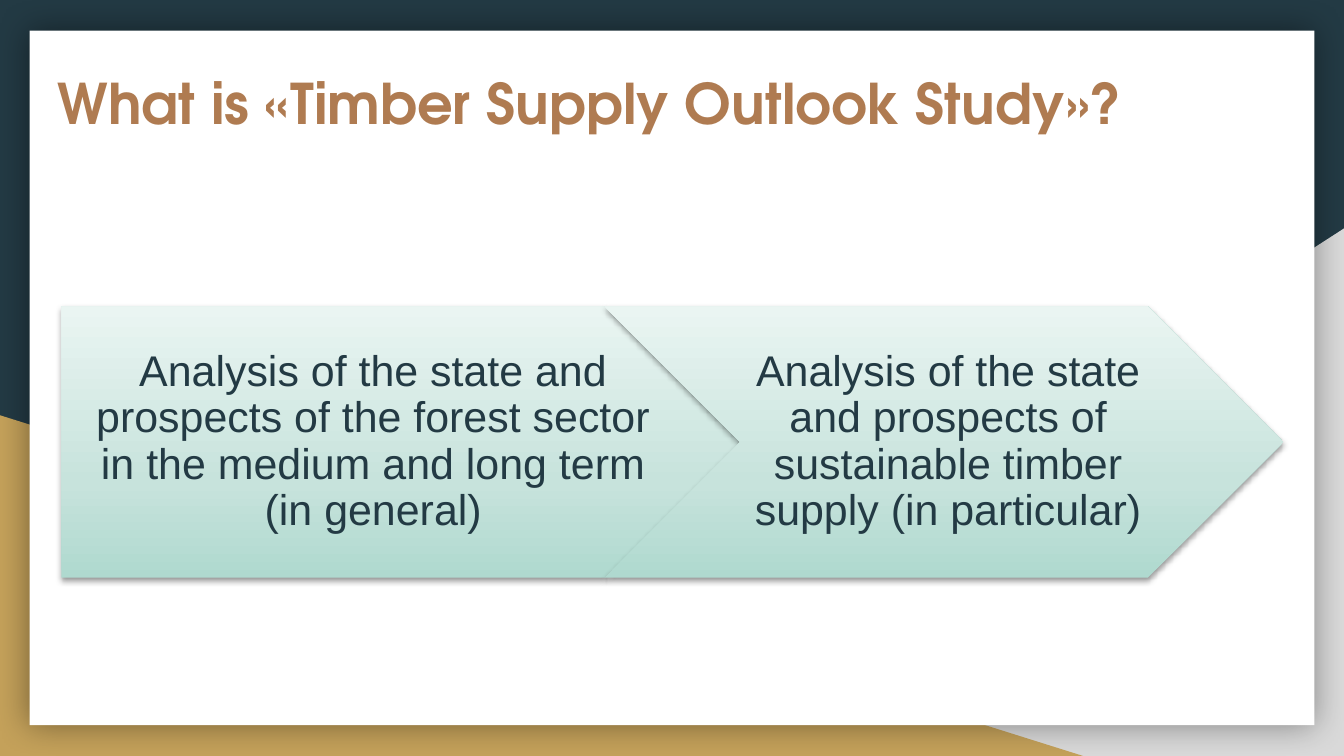
from lxml import etree
from pptx import Presentation
from pptx.dml.color import RGBColor
from pptx.enum import shapes, text
from pptx.oxml import parse_xml
from pptx.oxml.ns import nsdecls
from pptx.util import Cm, Pt

COLORS = {
    "night": "233A44", "grey": "D9D9D9", "gold": "C4A15A", "white": "FFFFFF",
    "copper": "AF7B51", "mint": "AFD9CF", "mint_mid": "C7E3DC", "mint_pale": "EAF5F2",
}


def write(shape, words, *, font, size, color, margins, bold=False, spacing=1.0, after=0,
          align=text.PP_ALIGN.LEFT, anchor=text.MSO_ANCHOR.TOP):
    """Put one formatted paragraph in a shape; margins are left, top, right, bottom in cm."""
    frame = shape.text_frame
    frame.word_wrap = True
    frame.auto_size = text.MSO_AUTO_SIZE.NONE
    frame.vertical_anchor = anchor
    (frame.margin_left, frame.margin_top,
     frame.margin_right, frame.margin_bottom) = map(Cm, margins)
    paragraph = frame.paragraphs[0]
    paragraph.alignment = align
    paragraph.line_spacing = spacing
    paragraph.space_after = Pt(after)
    run = paragraph.add_run()
    run.text = words
    run.font.name, run.font.size, run.font.bold = font, Pt(size), bold
    run.font.color.rgb = RGBColor.from_string(COLORS[color])


def add_shadow(shape, opacity, blur, distance=0, degrees=0):
    shape.element.spPr.append(parse_xml(
        f'<a:effectLst {nsdecls("a")}><a:outerShdw blurRad="{Pt(blur)}" dist="{Pt(distance)}" '
        f'dir="{degrees * 60000}" algn="ctr" rotWithShape="0"><a:srgbClr val="000000">'
        f'<a:alpha val="{opacity * 1000}"/></a:srgbClr></a:outerShdw></a:effectLst>'))


prs = Presentation()
prs.slide_width, prs.slide_height = Cm(25.4), Cm(14.29)
slide = prs.slides.add_slide(prs.slide_layouts[5])
slide.background.fill.solid()
slide.background.fill.fore_color.rgb = RGBColor.from_string(COLORS["night"])

# Corner triangles and the white panel
kinds = shapes.MSO_SHAPE
backdrop = [
    (kinds.RIGHT_TRIANGLE, (9.96, 4.32, 15.44, 9.97), "grey"),
    (kinds.RIGHT_TRIANGLE, (0, 7.85, 20.47, 6.44), "gold"),
    (kinds.RECTANGLE, (0.56, 0.58, 24.28, 13.13), "white"),
]
layers = []
for kind, box, color in backdrop:
    layer = slide.shapes.add_shape(kind, *map(Cm, box))
    layer.fill.solid()
    layer.fill.fore_color.rgb = RGBColor.from_string(COLORS[color])
    layer.line.fill.background()
    layers.append(layer)
right_corner, left_corner, panel = layers
right_corner.element.spPr.xfrm.set("flipH", "1")
for corner in (right_corner, left_corner):
    corner.shadow.inherit = False
add_shadow(panel, opacity=40, blur=18)

# Title, brought in front of the panel
title = slide.shapes.title
title.left, title.top, title.width, title.height = map(Cm, (0.84, 1.04, 23.57, 2.64))
panel.element.addnext(title.element)
write(title, "What is «Timber Supply Outlook Study»?", font="TeX Gyre Adventor", size=30,
      color="copper", bold=True, margins=(0.25,) * 4)

# Two interlocking steps, from general to particular
STEP_LEFT, STEP_TOP, STEP_WIDTH, STEP_HEIGHT = 1.16, 5.79, 12.83, 5.13
OVERLAP = STEP_HEIGHT / 2
steps = [
    (kinds.PENTAGON, 0.33, "Analysis of the state and prospects of the forest sector "
                           "in the medium and long term (in general)"),
    (kinds.CHEVRON, 0.25, "Analysis of the state and prospects of sustainable timber "
                          "supply (in particular)"),
]
for i, (kind, inset, words) in enumerate(steps):
    step = slide.shapes.add_shape(kind, Cm(STEP_LEFT + i * (STEP_WIDTH - OVERLAP)),
                                  Cm(STEP_TOP), Cm(STEP_WIDTH), Cm(STEP_HEIGHT))
    step.fill.gradient()
    step.fill.gradient_angle = 90
    stops = step.element.spPr.find(".//{*}gsLst")
    for stop in list(stops):
        stops.remove(stop)
    for position, color in ((0, "mint"), (35, "mint_mid"), (100, "mint_pale")):
        stop = etree.SubElement(stops, stops.tag.replace("gsLst", "gs"), pos=str(position * 1000))
        etree.SubElement(stop, stops.tag.replace("gsLst", "srgbClr"), val=COLORS[color])
    step.line.fill.background()
    add_shadow(step, opacity=38, blur=3.1, distance=1.6, degrees=90)
    write(step, words, font="Arial", size=23, color="night", spacing=0.9, after=8,
          margins=(inset, 0.17, 0.08, 0.17), align=text.PP_ALIGN.CENTER,
          anchor=text.MSO_ANCHOR.MIDDLE)

prs.save("out.pptx")
